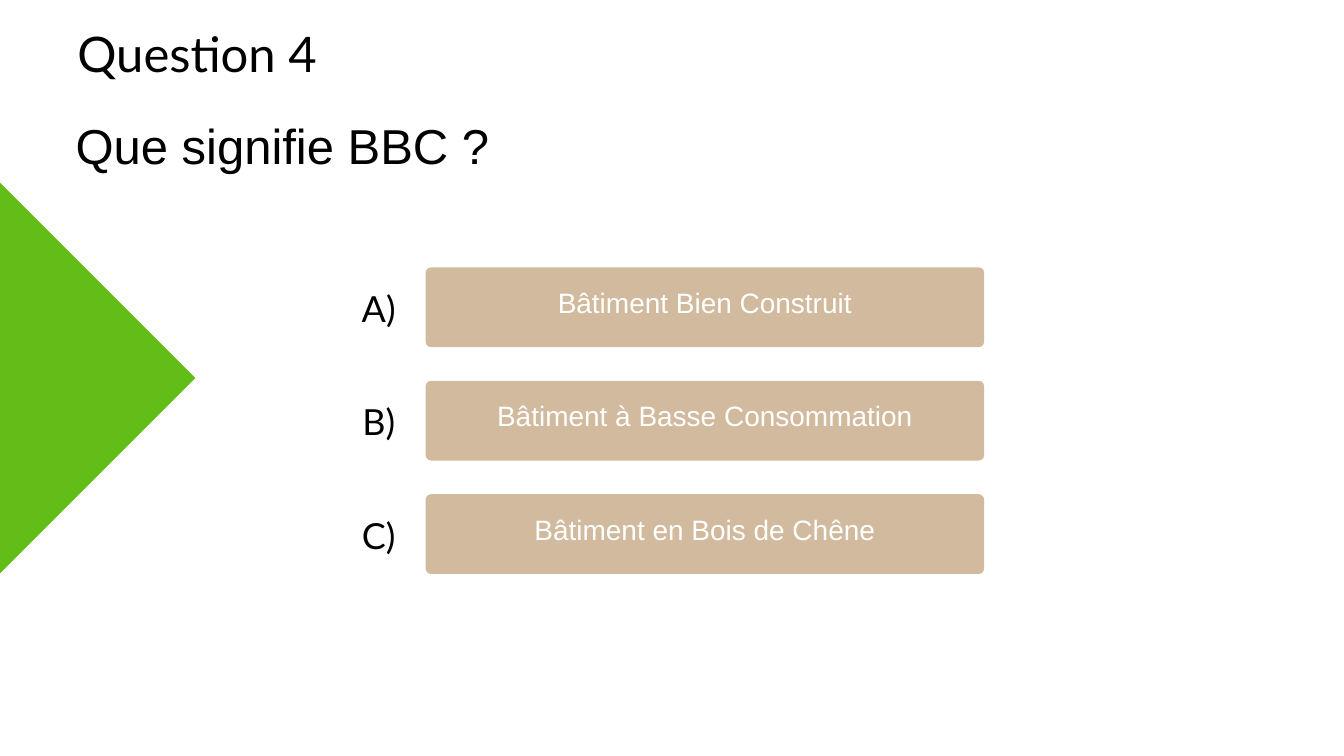
import pptx
import pptx.util
import pptx.dml.color
import pptx.enum.shapes
import pptx.enum.text
import pptx.oxml

PX = 9525  # EMU per px, 96 px to the inch
COLORS = {"black": "000000", "white": "FFFFFF", "sand": "D1BA9D", "green": "62BD19"}
ALIGN = pptx.enum.text.PP_ALIGN
SHAPES = pptx.enum.shapes.MSO_SHAPE

# Text formats: font, size, color, line spacing, alignment
FORMATS = {
    "title": ("Lato", 52.5, "black", 73.5, ALIGN.CENTER),
    "question": ("Arial", 52.5, "black", 57.2, ALIGN.LEFT),
    "answer": ("Arial", 30, "white", 32.7, ALIGN.CENTER),
    "letter": ("Lato", 38.5, "black", 53.9, ALIGN.CENTER),
}


def set_attributes(target, values):
    for name, value in values.items():
        setattr(target, name, value)


def rgb(color):
    return pptx.dml.color.RGBColor.from_string(COLORS[color])


class QuizSlide:
    def __init__(self, slide):
        self.slide = slide

    def place(self, shape, box):
        names = ("left", "top", "width", "height")
        set_attributes(shape, {name: length * PX for name, length in zip(names, box)})

    def fill_text(self, shape, text, style):
        font, size, color, spacing, alignment = FORMATS[style]
        frame = shape.text_frame
        set_attributes(frame, {
            "text": text,
            "margin_left": 0, "margin_top": 0, "margin_right": 0, "margin_bottom": 0,
            "word_wrap": True,
            "auto_size": pptx.enum.text.MSO_AUTO_SIZE.NONE,
            "vertical_anchor": pptx.enum.text.MSO_ANCHOR.TOP,
        })
        paragraph = frame.paragraphs[0]
        set_attributes(paragraph, {
            "alignment": alignment,
            "line_spacing": pptx.util.Pt(spacing),
            "space_before": pptx.util.Pt(0),
        })
        run = paragraph.runs[0]
        set_attributes(run.font, {"name": font, "size": pptx.util.Pt(size)})
        run.font.color.rgb = rgb(color)
        return paragraph

    def placeholder(self, index, box, text, style):
        shape = self.slide.placeholders[index]
        self.place(shape, box)
        return self.fill_text(shape, text, style)

    def title(self, box, text):
        self.placeholder(0, box, text, "title")

    def body(self, box, text):
        paragraph = self.placeholder(1, box, text, "question")
        # No bullet and no hanging indent
        properties = paragraph._p.get_or_add_pPr()
        properties.set("marL", "0")
        properties.set("indent", "0")
        properties.append(pptx.oxml.parse_xml(
            '<a:buNone xmlns:a="http://schemas.openxmlformats.org/drawingml/2006/main"/>'))

    def text(self, box, text, style):
        shape = self.slide.shapes.add_textbox(*(length * PX for length in box))
        self.fill_text(shape, text, style)

    def shape(self, kind, box, color):
        shape = self.slide.shapes.add_shape(kind, *(length * PX for length in box))
        shape.shadow.inherit = False
        shape.fill.solid()
        shape.fill.fore_color.rgb = rgb(color)
        shape.line.fill.background()
        return shape


def main():
    presentation = pptx.Presentation()
    set_attributes(presentation, {"slide_width": 1920 * PX, "slide_height": 1080 * PX})
    quiz = QuizSlide(presentation.slides.add_slide(presentation.slide_layouts[1]))

    # Heading and question
    quiz.title((108, 19, 347, 105), "Question 4")
    quiz.body((108, 172, 709, 88), "Que signifie BBC ?")

    # Green diamond, half of it past the left edge
    quiz.shape(SHAPES.DIAMOND, (-281, 260, 560, 560), "green")

    # Answers at an equal pitch
    answers = {
        "A)": "Bâtiment Bien Construit",
        "B)": "Bâtiment à Basse Consommation",
        "C)": "Bâtiment en Bois de Chêne",
    }
    for row, (letter, answer) in enumerate(answers.items()):
        top = 382 + 162 * row
        button = quiz.shape(SHAPES.ROUNDED_RECTANGLE, (608, top, 798, 114), "sand")
        button.adjustments[0] = 0.07
        quiz.text((673, top + 30, 668, 50), answer, "answer")
        quiz.text((514, top + 17, 54, 77), letter, "letter")

    presentation.save("out.pptx")


if __name__ == "__main__":
    main()
